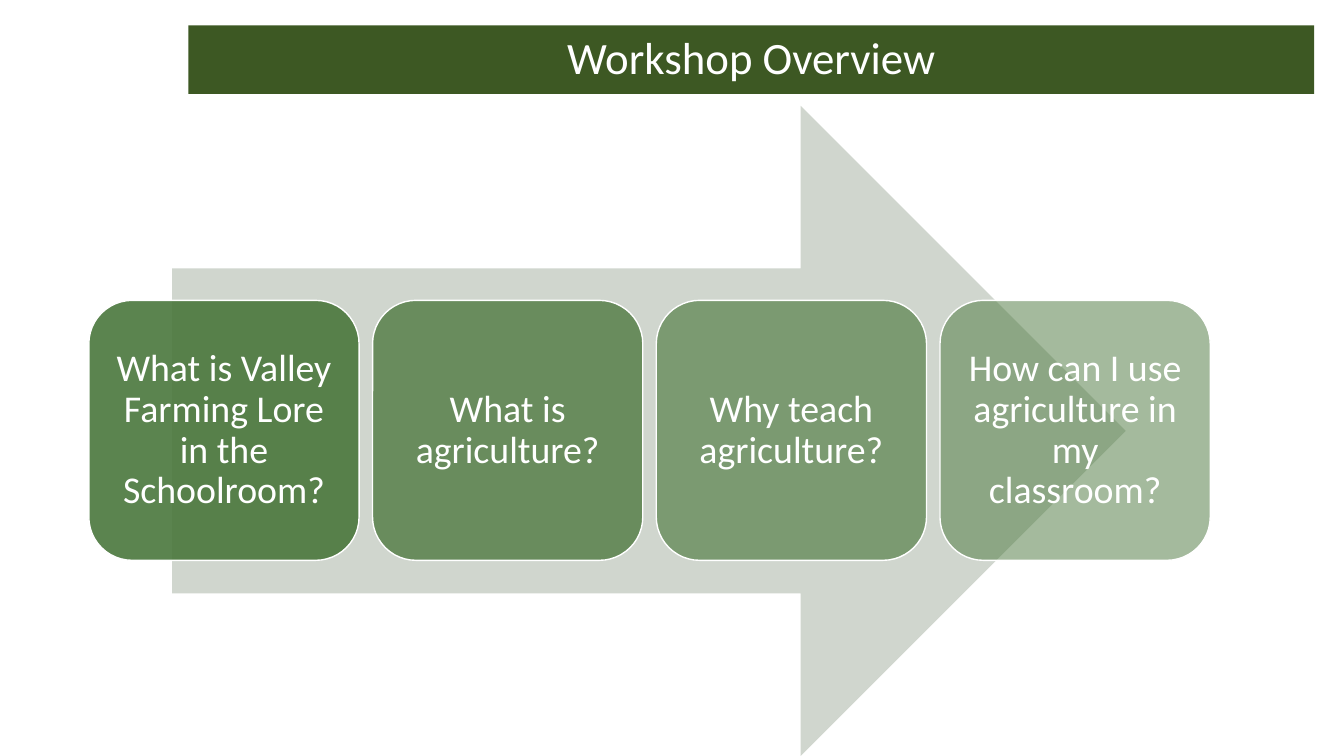
"""Builds the workshop overview slide: a title bar and four steps on an arrow."""
import pptx
import pptx.dml.color
import pptx.enum.shapes
import pptx.enum.text
import pptx.oxml
import pptx.oxml.ns
import pptx.util

Cm = pptx.util.Cm
Pt = pptx.util.Pt
SHAPES = pptx.enum.shapes.MSO_SHAPE

TITLE = "Workshop Overview"
STEPS = [
    ("What is Valley Farming Lore in the Schoolroom?", 90),
    ("What is agriculture?", 77),
    ("Why teach agriculture?", 63),
    ("How can I use agriculture in my classroom?", 50),
]
COLORS = {"bar": "3D5823", "arrow": "D0D6CE", "step": "4A773C", "white": "FFFFFF"}
FONT = "Calibri"

BAR = (4.75, 0.64, 28.37, 1.73)
ARROW = (4.34, 2.67, 24.03, 16.38)
STEP_LEFT, STEP_TOP, STEP_WIDTH, STEP_HEIGHT = 2.24, 7.57, 6.81, 6.55
STEP_PITCH = 7.15
STEP_INSET = 0.28


def color(name):
    return pptx.dml.color.RGBColor.from_string(COLORS[name])


def add_block(slide, kind, box, fill):
    shape = slide.shapes.add_shape(kind, *map(Cm, box))
    shape.shadow.inherit = False
    shape.fill.solid()
    shape.fill.fore_color.rgb = color(fill)
    shape.line.fill.background()
    return shape


def set_opacity(shape, percent):
    fill_color = shape.fill._xPr.find(".//" + pptx.oxml.ns.qn("a:srgbClr"))
    alpha = pptx.oxml.parse_xml(
        f'<a:alpha {pptx.oxml.ns.nsdecls("a")} val="{percent * 1000}"/>')
    fill_color.append(alpha)


def set_text(shape, text, size, inset):
    frame = shape.text_frame
    frame.text = text
    frame.word_wrap = True
    frame.vertical_anchor = pptx.enum.text.MSO_ANCHOR.MIDDLE
    frame.margin_left = frame.margin_right = Cm(inset)
    frame.margin_top = frame.margin_bottom = Cm(inset)
    paragraph = frame.paragraphs[0]
    paragraph.alignment = pptx.enum.text.PP_ALIGN.CENTER
    paragraph.line_spacing = 0.9
    font = paragraph.runs[0].font
    font.name = FONT
    font.size = Pt(size)
    font.color.rgb = color("white")


def main():
    presentation = pptx.Presentation()
    presentation.slide_width = Cm(33.87)
    presentation.slide_height = Cm(19.05)
    slide = presentation.slides.add_slide(presentation.slide_layouts[6])

    bar = add_block(slide, SHAPES.RECTANGLE, BAR, "bar")
    set_text(bar, TITLE, 32, 0.13)
    add_block(slide, SHAPES.RIGHT_ARROW, ARROW, "arrow")

    for index, (text, opacity) in enumerate(STEPS):
        box = (STEP_LEFT + index * STEP_PITCH, STEP_TOP, STEP_WIDTH, STEP_HEIGHT)
        step = add_block(slide, SHAPES.ROUNDED_RECTANGLE, box, "step")
        set_opacity(step, opacity)
        step.line.color.rgb = color("white")
        step.line.width = Pt(1)
        set_text(step, text, 27, STEP_INSET)

    presentation.save("out.pptx")


if __name__ == "__main__":
    main()
